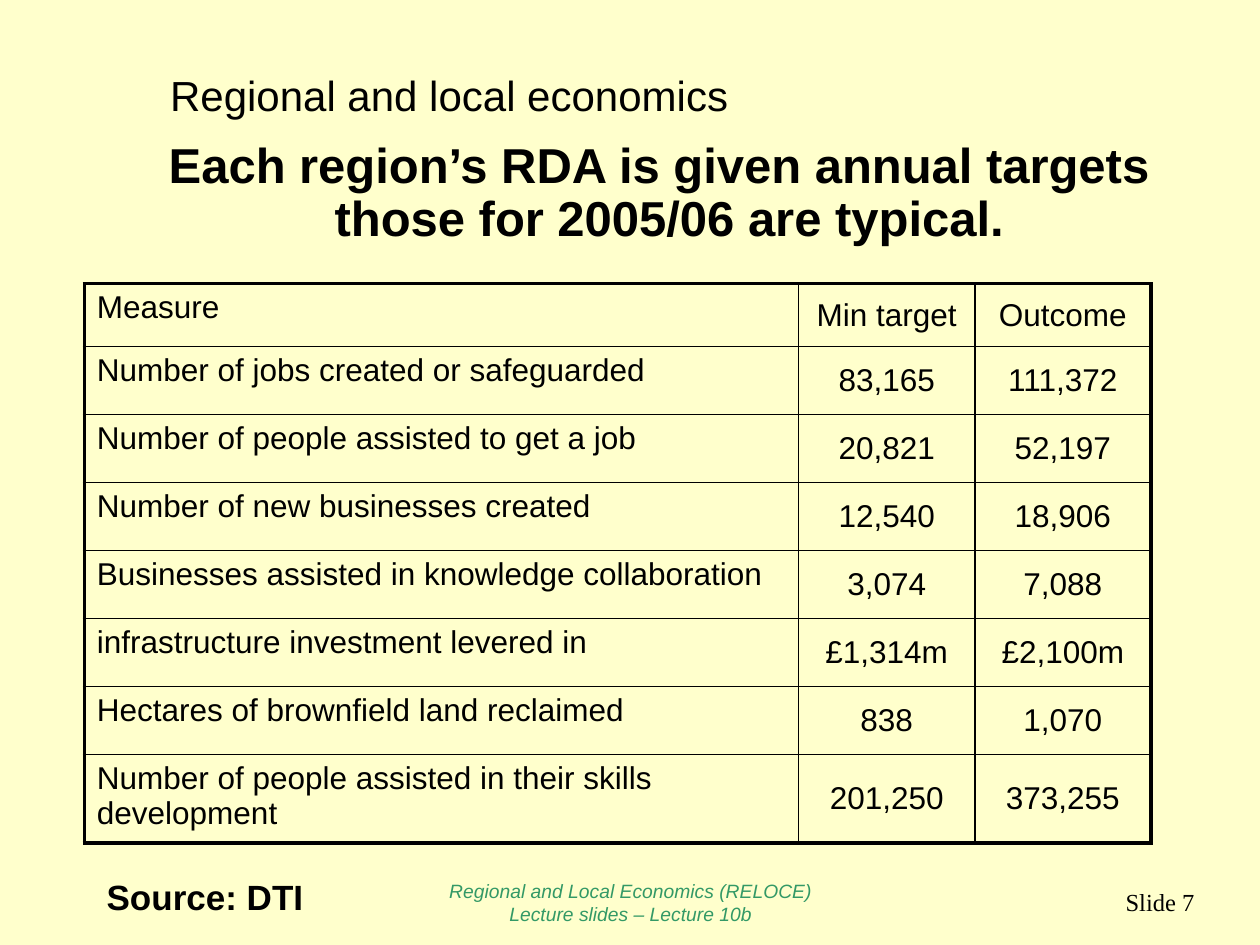
import pptx
import pptx.dml.color
import pptx.enum.text
import pptx.oxml
import pptx.oxml.ns
import pptx.util
from pptx.util import Cm, Pt

ALIGN = pptx.enum.text.PP_ALIGN
ANCHOR = pptx.enum.text.MSO_ANCHOR

BACKGROUND, INK, GREEN = "FFFFCC", "000000", "339966"

# Each box: left, top, width, height in cm, lines of text, anchor, paragraph and font formats
BOXES = [
    ((3.18, 1.27, 12.32, 1.3), ["Regional and local economics"], ANCHOR.TOP,
     {"space_before": Pt(3)}, {"size": Pt(24)}),
    ((2.49, 2.72, 21.59, 2.59),
     ["Each region’s RDA is given annual targets those for 2005/06 are typical."], ANCHOR.TOP,
     {"alignment": ALIGN.CENTER, "line_spacing": 0.9, "space_before": Pt(3)},
     {"size": Pt(28), "bold": True}),
    ((1.9, 17.53, 5.59, 1.09), ["Source: DTI"], ANCHOR.TOP,
     {"space_before": Pt(2)}, {"size": Pt(20), "bold": True}),
    ((8.69, 17.55, 8.05, 1.27),
     ["Regional and Local Economics (RELOCE)", "Lecture slides – Lecture 10b"], ANCHOR.MIDDLE,
     {"alignment": ALIGN.CENTER}, {"size": Pt(11), "italic": True, "color": GREEN}),
    ((19.05, 17.55, 5.28, 1.27), ["Slide 7"], ANCHOR.MIDDLE,
     {"alignment": ALIGN.RIGHT}, {"size": Pt(14), "name": "Times New Roman"}),
]
TITLE = 1
TITLE_HANGING = Cm(0.41)

TARGETS = [
    ("Measure", "Min target", "Outcome"),
    ("Number of jobs created or safeguarded", "83,165", "111,372"),
    ("Number of people assisted to get a job", "20,821", "52,197"),
    ("Number of new businesses created", "12,540", "18,906"),
    ("Businesses assisted in knowledge collaboration", "3,074", "7,088"),
    ("infrastructure investment levered in", "£1,314m", "£2,100m"),
    ("Hectares of brownfield land reclaimed", "838", "1,070"),
    ("Number of people assisted in their skills development", "201,250", "373,255"),
]
TABLE_LEFT, TABLE_TOP = 1.7, 5.72
COLUMN_WIDTHS = [14.4, 3.55, 3.55]
ROW_HEIGHTS = [1.27] + [1.37] * 6 + [1.78]
OUTER_LINE, INNER_LINE = Pt(2.25), Pt(1)


def rgb(value):
    return pptx.dml.color.RGBColor.from_string(value)


def write(frame, lines, paragraph_format, font_format):
    font_values = {"name": "Arial", "color": INK, **font_format}
    color = rgb(font_values.pop("color"))
    for number, line in enumerate(lines):
        para = frame.add_paragraph() if number else frame.paragraphs[0]
        for name, value in paragraph_format.items():
            setattr(para, name, value)
        span = para.add_run()
        span.text = line
        for name, value in font_values.items():
            setattr(span.font, name, value)
        span.font.color.rgb = color


def add_box(page, place, lines, anchor, paragraph_format, font_format):
    box = page.shapes.add_textbox(*map(Cm, place))
    box.text_frame.word_wrap = True
    box.text_frame.vertical_anchor = anchor
    write(box.text_frame, lines, paragraph_format, font_format)
    return box


def set_borders(cell, outer_sides):
    """Draw the four sides of a cell, heavier where they lie on the table's edge."""
    properties = cell._tc.get_or_add_tcPr()
    for position, side in enumerate("LRTB"):
        width = OUTER_LINE if side in outer_sides else INNER_LINE
        properties.insert(position, pptx.oxml.parse_xml(
            f'<a:ln{side} {pptx.oxml.ns.nsdecls("a")} w="{int(width)}">'
            f'<a:solidFill><a:srgbClr val="{INK}"/></a:solidFill></a:ln{side}>'))


def add_targets(page):
    last_row, last_column = len(TARGETS) - 1, len(COLUMN_WIDTHS) - 1
    table = page.shapes.add_table(
        len(TARGETS), len(COLUMN_WIDTHS), Cm(TABLE_LEFT), Cm(TABLE_TOP),
        Cm(sum(COLUMN_WIDTHS)), Cm(sum(ROW_HEIGHTS))).table
    table.first_row = table.horz_banding = False
    for column, width in zip(table.columns, COLUMN_WIDTHS):
        column.width = Cm(width)
    for row, height in zip(table.rows, ROW_HEIGHTS):
        row.height = Cm(height)

    for r, values in enumerate(TARGETS):
        for c, value in enumerate(values):
            cell = table.cell(r, c)
            cell.fill.background()
            cell.vertical_anchor = ANCHOR.MIDDLE if c else ANCHOR.TOP
            alignment = ALIGN.CENTER if c else ALIGN.LEFT
            write(cell.text_frame, [value], {"alignment": alignment}, {"size": Pt(18)})
            on_edge = {"L": c == 0, "R": c == last_column, "T": r == 0, "B": r == last_row}
            set_borders(cell, [side for side, outer in on_edge.items() if outer])


def main():
    deck = pptx.Presentation()
    deck.slide_width, deck.slide_height = Cm(25.4), Cm(19.05)
    page = deck.slides.add_slide(deck.slide_layouts[6])
    page.background.fill.solid()
    page.background.fill.fore_color.rgb = rgb(BACKGROUND)

    boxes = [add_box(page, *content) for content in BOXES]
    title_properties = boxes[TITLE].text_frame.paragraphs[0]._p.get_or_add_pPr()
    title_properties.set("marL", str(int(TITLE_HANGING)))
    title_properties.set("indent", str(-int(TITLE_HANGING)))
    add_targets(page)
    deck.save("out.pptx")


if __name__ == "__main__":
    main()
